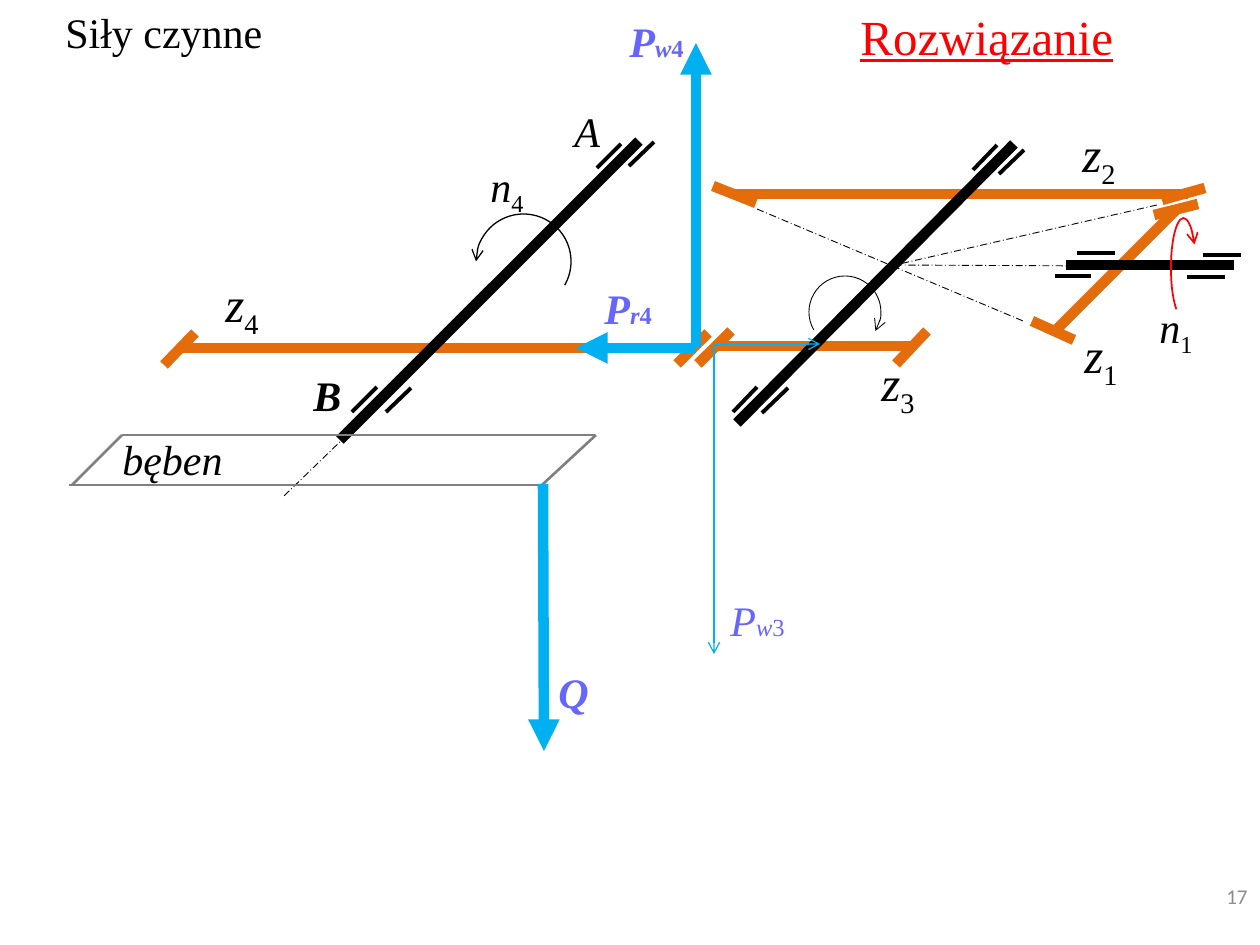
import pptx
import pptx.util
from pptx.dml.color import RGBColor
from pptx.enum.dml import MSO_LINE
from pptx.enum.shapes import MSO_CONNECTOR, MSO_SHAPE
from pptx.enum.text import MSO_ANCHOR, PP_ALIGN
from pptx.oxml.ns import qn
from lxml import etree

EMU_PER_PX = 914400 / 126

ORANGE = RGBColor(0xE4, 0x6C, 0x0A)
BLACK = RGBColor(0x00, 0x00, 0x00)
GRAY = RGBColor(0x80, 0x80, 0x80)
PALE_GRAY = RGBColor(0x8C, 0x8C, 0x8C)
BLUE = RGBColor(0x00, 0xB0, 0xF0)
VIOLET = RGBColor(0x66, 0x66, 0xFF)
RED = RGBColor(0xFF, 0x00, 0x00)

# Lines: x1, y1, x2, y2 in px
GEARS = [
    (733, 194, 1188, 194), (180, 348, 696, 348), (713, 346, 910, 346),
    (195, 333, 164, 365), (756, 203, 713, 186), (927, 331, 896, 364),
    (731, 331, 698, 364), (708, 333, 677, 364), (1074, 340, 1032, 321),
    (1205, 188, 1162, 200), (1198, 204, 1154, 215), (1176, 210, 1055, 331),
]
AXES = [
    (757, 209, 1023, 321), (1157, 205, 895, 265),
    (895, 265, 1100, 266), (347, 435, 284, 496),
]
SHAFTS = [(639, 141, 340, 440), (1014, 144, 737, 423), (1066, 265, 1234, 265)]
DRUM = [
    (122, 435, 595, 435), (69, 485, 542, 485),
    (596, 435, 542, 485), (122, 435, 72, 485),
]
BEARINGS = [
    (377, 387, 352, 412), (411, 388, 386, 412),
    (621, 144, 597, 168), (654, 142, 629, 166),
    (997, 145, 973, 170), (1024, 150, 999, 174),
    (788, 388, 762, 413), (757, 387, 733, 412),
    (1187, 277, 1225, 277), (1203, 255, 1241, 255),
    (1055, 276, 1091, 276), (1077, 253, 1115, 253),
]
ACTIVE_FORCES = [(696, 348, 696, 43), (696, 348, 576, 348), (543, 484, 544, 751)]
REACTIONS = [(714, 346, 714, 654), (714, 344, 820, 344)]

# Symbols with a subscript: letter, index, left, top, width, size
SUBSCRIPTED = [
    ("z", "4", 213, 267, 72, 28), ("z", "3", 869, 346, 102, 28),
    ("z", "2", 1070, 117, 87, 28), ("z", "1", 1072, 318, 77, 28),
    ("n", "1", 1147, 295, 87, 24), ("n", "4", 478, 154, 69, 24),
]
# Forces: direction, index, left, top, width, bold
FORCE_NAMES = [
    ("w", "4", 617, 9, 115, True), ("r", "4", 592, 276, 83, True),
    ("w", "3", 718, 588, 91, False),
]
# Italic names: text, left, top, width, colour, bold
NAMES = [
    ("Q", 546, 660, 88, VIOLET, True), ("A", 562, 99, 84, BLACK, False),
    ("B", 301, 363, 81, BLACK, True), ("bęben", 110, 427, 226, BLACK, False),
]


def px(length):
    return pptx.util.Emu(round(length * EMU_PER_PX))


def style_line(line, color, width, arrow=None, end="tailEnd"):
    line.color.rgb = color
    line.width = pptx.util.Pt(width)
    if arrow:
        etree.SubElement(line._get_or_add_ln(), qn("a:" + end), type=arrow)


def add_lines(slide, segments, color, width, arrow=None, dash=None):
    for segment in segments:
        connector = slide.shapes.add_connector(
            MSO_CONNECTOR.STRAIGHT, *map(px, segment))
        if dash:
            connector.line.dash_style = dash
        style_line(connector.line, color, width, arrow)
        etree.SubElement(connector._element.spPr, qn("a:effectLst"))


def add_rotation(slide, box, angles, color, width, end):
    shape = slide.shapes.add_shape(MSO_SHAPE.ARC, *map(px, box))
    shape.shadow.inherit = False
    shape.fill.background()
    shape.adjustments[0], shape.adjustments[1] = angles
    style_line(shape.line, color, width, "arrow", end)


def add_text(slide, box, runs, size, color=BLACK, bold=False,
             name="Times New Roman"):
    """Each run is a text with the font settings that differ from the paragraph."""
    text_frame = slide.shapes.add_textbox(*map(px, box)).text_frame
    text_frame.word_wrap = True
    paragraph = text_frame.paragraphs[0]
    font = paragraph.font
    font.name, font.size, font.bold = name, pptx.util.Pt(size), bold
    font.color.rgb = color
    for text, settings in runs:
        run = paragraph.add_run()
        run.text = text
        for key, value in settings.items():
            if key == "baseline":
                run.font._element.set(key, str(value))
            else:
                setattr(run.font, key, value)
    return text_frame


def add_labels(slide):
    italic = {"italic": True}
    for letter, index, left, top, width, size in SUBSCRIPTED:
        add_text(slide, (left, top, width, 72 if size == 28 else 63),
                 [(letter, italic), (index, {"baseline": -25000})], size)
    small = pptx.util.Pt(14)
    for direction, index, left, top, width, bold in FORCE_NAMES:
        runs = [("P", italic), (direction, {"italic": True, "size": small}),
                (index, {"size": small})]
        add_text(slide, (left, top, width, 63), runs, 24, VIOLET, bold)
    for text, left, top, width, color, bold in NAMES:
        add_text(slide, (left, top, width, 63), [(text, italic)], 24, color, bold)


def main():
    presentation = pptx.Presentation()
    presentation.slide_width, presentation.slide_height = px(1260), px(945)
    slide = presentation.slides.add_slide(presentation.slide_layouts[6])

    # Gear train
    add_lines(slide, GEARS, ORANGE, 6)
    add_lines(slide, AXES, BLACK, 0.5, dash=MSO_LINE.LONG_DASH_DOT)
    add_lines(slide, SHAFTS, BLACK, 6)
    add_lines(slide, DRUM, GRAY, 1.5)
    add_lines(slide, BEARINGS, BLACK, 2.25)

    # Directions of rotation
    add_rotation(slide, (1171, 218, 25, 100), (59.84, 177.1), RED, 1, "tailEnd")
    add_rotation(slide, (809, 276, 72, 72), (89.96, 19.2), BLACK, 0.5, "tailEnd")
    add_rotation(slide, (476, 214, 95, 95), (108.04, 17.85), BLACK, 0.75, "headEnd")

    # Forces
    add_lines(slide, ACTIVE_FORCES, BLUE, 6, "triangle")
    add_lines(slide, REACTIONS, BLUE, 0.75, "arrow")

    # Labels, headings and page number
    add_labels(slide)
    add_text(slide, (53, 0, 350, 63), [("Siły czynne", {})], 24)
    add_text(slide, (848, 0, 320, 72), [("Rozwiązanie", {"underline": True})], 28, RED)
    page_number = add_text(slide, (1179, 870, 81, 53), [("17", {})], 12,
                           PALE_GRAY, name="Calibri")
    page_number.vertical_anchor = MSO_ANCHOR.MIDDLE
    page_number.paragraphs[0].alignment = PP_ALIGN.RIGHT

    presentation.save("out.pptx")


if __name__ == "__main__":
    main()
